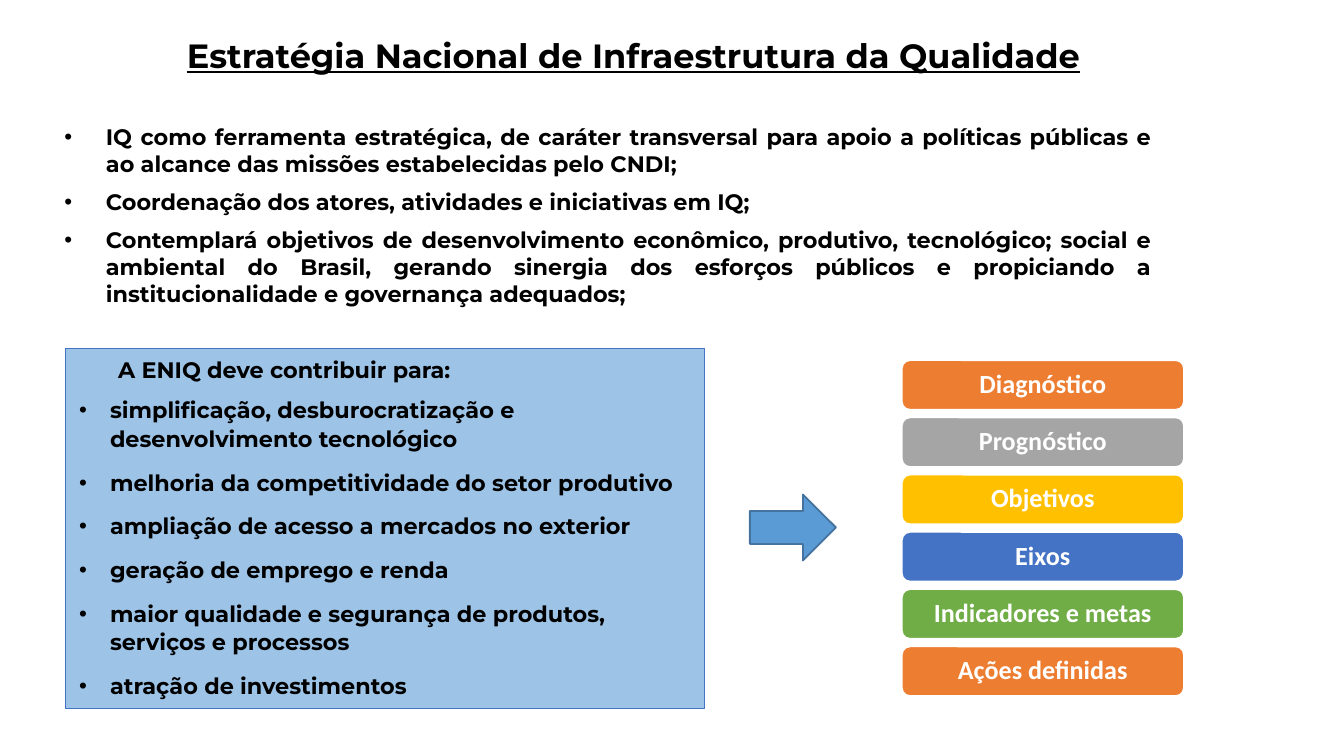
from lxml import etree
from pptx import Presentation
from pptx.dml.color import RGBColor
from pptx.enum import shapes, text
from pptx.oxml.ns import qn
from pptx.util import Inches, Pt

HUES = {
    "black": "000000", "white": "FFFFFF", "sky": "9DC3E6", "blue": "4472C4",
    "orange": "ED7D31", "gray": "A5A5A5", "gold": "FFC000", "green": "70AD47",
    "arrow": "5B9BD5", "edge": "43739E",
}
TITLE = "Estratégia Nacional de Infraestrutura da Qualidade"
POINTS = [
    "IQ como ferramenta estratégica, de caráter transversal para apoio a políticas públicas e ao alcance das missões estabelecidas pelo CNDI;",
    "Coordenação dos atores, atividades e iniciativas em IQ;",
    "Contemplará objetivos de desenvolvimento econômico, produtivo, tecnológico; social e ambiental do Brasil, gerando sinergia dos esforços públicos e propiciando a institucionalidade e governança adequados;",
]
LEAD = "A ENIQ deve contribuir para:"
GOALS = [
    "simplificação, desburocratização e desenvolvimento tecnológico",
    "melhoria da competitividade do setor produtivo",
    "ampliação de acesso a mercados no exterior",
    "geração de emprego e renda",
    "maior qualidade e segurança de produtos, serviços e processos",
    "atração de investimentos",
]
STEPS = [
    ("Diagnóstico", "orange"), ("Prognóstico", "gray"), ("Objetivos", "gold"),
    ("Eixos", "blue"), ("Indicadores e metas", "green"), ("Ações definidas", "orange"),
]
ALIGN = text.PP_ALIGN
KIND = shapes.MSO_SHAPE
HEAD = {"alignment": ALIGN.CENTER, "line_spacing": 1.07, "space_after": Pt(25.5)}
POINT = {"alignment": ALIGN.JUSTIFY, "space_after": Pt(6)}
INTRO = {"alignment": ALIGN.LEFT, "line_spacing": 1.07, "space_after": Pt(6)}
GOAL = {**INTRO, "space_after": Pt(8)}
STEP = {"alignment": ALIGN.CENTER, "line_spacing": 0.9}
BODY = {"name": "Montserrat", "size": Pt(12), "bold": True}
LARGE = {**BODY, "size": Pt(18), "underline": True}
LABEL = {"name": "Calibri", "size": Pt(14), "bold": True}


def color(key):
    return RGBColor.from_string(HUES[key])


def apply(item, form):
    for key, value in form.items():
        setattr(item, key, value)


def write(frame, words, form, font, hue="black", left=0, hang=0):
    para = frame.paragraphs[0]
    if para.runs:
        para = frame.add_paragraph()
    props = para._p.get_or_add_pPr()
    props.set("marL", str(Inches(left)))
    props.set("indent", str(Inches(-hang)))
    if hang:
        face = etree.SubElement(props, qn("a:buFont"))
        face.set("typeface", "Arial")
        etree.SubElement(props, qn("a:buChar")).set("char", "•")
    apply(para, form)
    run = para.add_run()
    run.text = words
    apply(run.font, font)
    run.font.color.rgb = color(hue)


def draw(slide, kind, spot, fill, line, width):
    shape = slide.shapes.add_shape(kind, *map(Inches, spot))
    shape.shadow.inherit = False
    shape.fill.solid()
    shape.fill.fore_color.rgb = color(fill)
    shape.line.color.rgb = color(line)
    shape.line.width = Pt(width)
    shape.text_frame.word_wrap = True
    return shape


def build():
    deck = Presentation()
    deck.slide_width = Inches(10)
    deck.slide_height = deck.slide_width * 9 // 16
    slide = deck.slides.add_slide(deck.slide_layouts[6])

    box = slide.shapes.add_textbox(*map(Inches, (0.38, 0.19, 8.29, 2.45)))
    frame = box.text_frame
    frame.word_wrap = True
    write(frame, TITLE, HEAD, LARGE, left=0.38)
    for words in POINTS:
        write(frame, words, POINT, BODY, left=0.31, hang=0.31)

    panel = draw(slide, KIND.RECTANGLE, (0.49, 2.59, 4.75, 2.68), "sky", "blue", 0.5)
    frame = panel.text_frame
    frame.vertical_anchor = text.MSO_ANCHOR.TOP
    write(frame, LEAD, INTRO, BODY, left=0.29)
    for words in GOALS:
        write(frame, words, GOAL, BODY, left=0.23, hang=0.23)

    pad = dict.fromkeys(
        ("margin_left", "margin_top", "margin_right", "margin_bottom"), Inches(0.06))
    top, last = 2.68, 4.81
    pitch = (last - top) / (len(STEPS) - 1)
    for row, (words, hue) in enumerate(STEPS):
        spot = (6.71, top + row * pitch, 2.1, 0.37)
        step = draw(slide, KIND.ROUNDED_RECTANGLE, spot, hue, "white", 1)
        apply(step.text_frame, {**pad, "vertical_anchor": text.MSO_ANCHOR.MIDDLE})
        write(step.text_frame, words, STEP, LABEL, "white")

    draw(slide, KIND.RIGHT_ARROW, (5.58, 3.68, 0.64, 0.49), "arrow", "edge", 1)
    deck.save("out.pptx")


if __name__ == "__main__":
    build()
